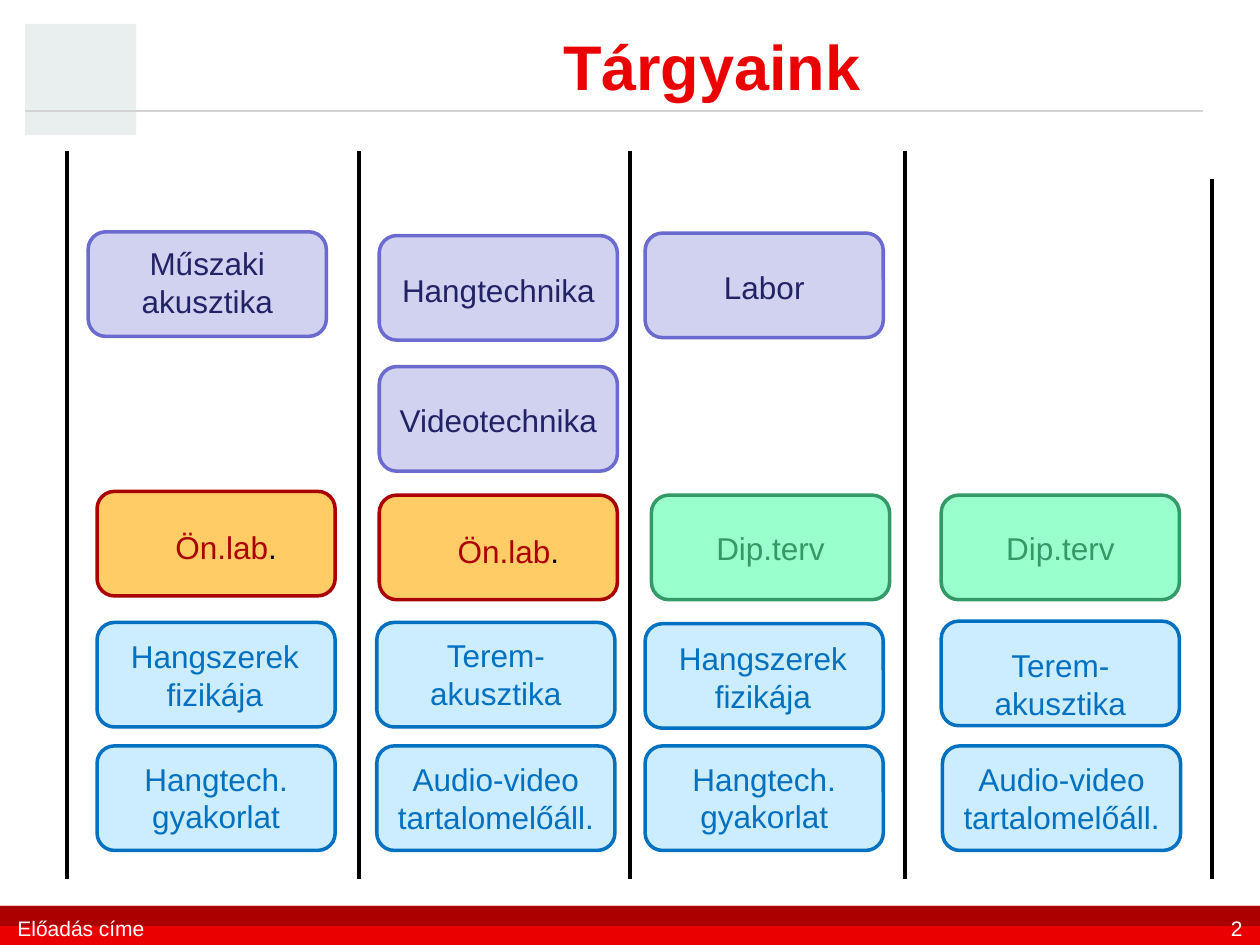
from lxml import etree
from pptx import Presentation
from pptx.dml.color import RGBColor
from pptx.enum import shapes, text
from pptx.oxml.ns import qn
from pptx.util import Inches, Pt

C = {"red": "EA0000", "dark": "AA0000", "white": "FFFFFF", "black": "000000",
     "rule": "D4D4D4", "mark": "E9EFEE"}
# Course kinds: fill, border, text
KINDS = {"core": ("D1D1F0", "6B6BCF", "222267"),
         "project": ("FFCC66", "AA0000", "AA0000"),
         "thesis": ("99FFCC", "339966", "339966"),
         "elective": ("CCECFF", "0070C0", "0070C0")}
ALIGN = text.PP_ALIGN
MIDDLE = text.MSO_ANCHOR.MIDDLE

prs = Presentation()
prs.slide_width, prs.slide_height = Inches(10), Inches(7.5)
slide = prs.slides.add_slide(prs.slide_layouts[6])
G = prs.slide_width // 100  # grid of 100 columns by 75 rows


def block(kind, box, fill, border=None):
    sp = slide.shapes.add_shape(kind, *(int(v * G) for v in box))
    sp.shadow.inherit = False
    sp.fill.solid()
    sp.fill.fore_color.rgb = RGBColor.from_string(fill)
    if border:
        sp.line.color.rgb = RGBColor.from_string(border)
        sp.line.width = Pt(2)
    else:
        sp.line.fill.background()
    return sp


def write(sp, words, size, color, align=ALIGN.CENTER, anchor=text.MSO_ANCHOR.TOP, side=0):
    tf = sp.text_frame
    tf.word_wrap = True
    tf.vertical_anchor = anchor
    tf.margin_left = tf.margin_right = side * G
    p = tf.paragraphs[0]
    p.text = words
    p.alignment = align
    p.font.name, p.font.size = "Arial", Pt(size)
    p.font.color.rgb = RGBColor.from_string(color)
    return p


# Footer bands and a plain block in the logo's place
RECT = shapes.MSO_SHAPE.RECTANGLE
block(RECT, (0, 71.9, 100, 3.1), C["red"])
block(RECT, (0, 71.9, 100, 1.6), C["dark"])
block(RECT, (2, 1.9, 8.8, 8.8), C["mark"])

# Header rule and semester dividers
lines = [(2, 8.8, 95.5, 8.8, "rule", 1.5)]
lines += [(x, 12, x, 69.8, "black", 2.25) for x in (5.3, 28.5, 50, 71.8)]
lines += [(96.2, 14.2, 96.2, 69.8, "black", 2.25)]
for *ends, color, width in lines:
    ln = slide.shapes.add_connector(shapes.MSO_CONNECTOR.STRAIGHT, *(int(v * G) for v in ends))
    ln.line.color.rgb = RGBColor.from_string(C[color])
    ln.line.width = Pt(width)
    etree.SubElement(ln._element.spPr, qn("a:effectLst"))

# Title and footer texts
for box, words, size, color, align, anchor in (
        ((13, 0.8, 87, 8.7), "Tárgyaink", 36, "red", ALIGN.CENTER, MIDDLE),
        ((0.4, 72.2, 23.3, 2.4), "Előadás címe", 12, "white", ALIGN.LEFT, None),
        ((76.3, 72.2, 23.3, 2.4), "2", 12, "white", ALIGN.RIGHT, None)):
    sp = slide.shapes.add_textbox(*(int(v * G) for v in box))
    p = write(sp, words, size, C[color], align, anchor, side=1)
    p.font.bold = size == 36

# Courses: kind, left, top, words, label offset from the card (None: inside it)
COURSES = [
    ("core", 7, 18.4, "Műszaki akusztika", (0, 0.5)),
    ("project", 7.7, 39, "Ön.lab", (0.8, 2.4)),
    ("elective", 7.7, 49.4, "Hangszerek fizikája", (-0.1, 0.7)),
    ("elective", 7.7, 59.2, "Hangtech. gyakorlat", (0, 0.6)),
    ("core", 30.1, 18.7, "Hangtechnika", (0, 2.3)),
    ("core", 30.1, 29.1, "Videotechnika", (0, 2.2)),
    ("project", 30.1, 39.3, "Ön.lab", (0.8, 2.4)),
    ("elective", 29.9, 49.4, "Terem-\nakusztika", (0, 0.6)),
    ("elective", 29.9, 59.2, "Audio-video tartalomelőáll.", None),
    ("core", 51.2, 18.5, "Labor", (0, 2.3)),
    ("thesis", 51.7, 39.3, "Dip.terv", (0, 2.2)),
    ("elective", 51.2, 49.5, "Hangszerek fizikája", (-0.1, 0.7)),
    ("elective", 51.2, 59.2, "Hangtech. gyakorlat", (0, 0.6)),
    ("thesis", 74.7, 39.3, "Dip.terv", (0, 2.2)),
    ("elective", 74.7, 49.3, "Terem-\nakusztika", (0, 1.5)),
    ("elective", 74.8, 59.2, "Audio-video tartalomelőáll.", None),
]
CARD_W, CARD_H, LABEL_W = 18.9, 8.3, 15.9
for kind, x, y, words, offset in COURSES:
    fill, border, ink = KINDS[kind]
    sp = block(shapes.MSO_SHAPE.ROUNDED_RECTANGLE, (x, y, CARD_W, CARD_H), fill, border)
    if offset is None:
        write(sp, words, 18, ink, anchor=MIDDLE)
        continue
    dx, dy = offset
    left = x + (CARD_W - LABEL_W) / 2 + dx
    height = 4 if " " not in words and "\n" not in words else 7.1
    label = slide.shapes.add_textbox(*(int(v * G) for v in (left, y + dy, LABEL_W, height)))
    p = write(label, words, 18, ink)
    if kind == "project":
        r = p.add_run()
        r.text = "."
        r.font.color.rgb = RGBColor.from_string(C["black"])
    if kind == "thesis":  # outlined letters
        outline = etree.SubElement(p.runs[0]._r.get_or_add_rPr(), qn("a:ln"), w=str(Pt(0.75)))
        solid = etree.SubElement(outline, qn("a:solidFill"))
        etree.SubElement(solid, qn("a:srgbClr"), val=ink)

prs.save("out.pptx")
